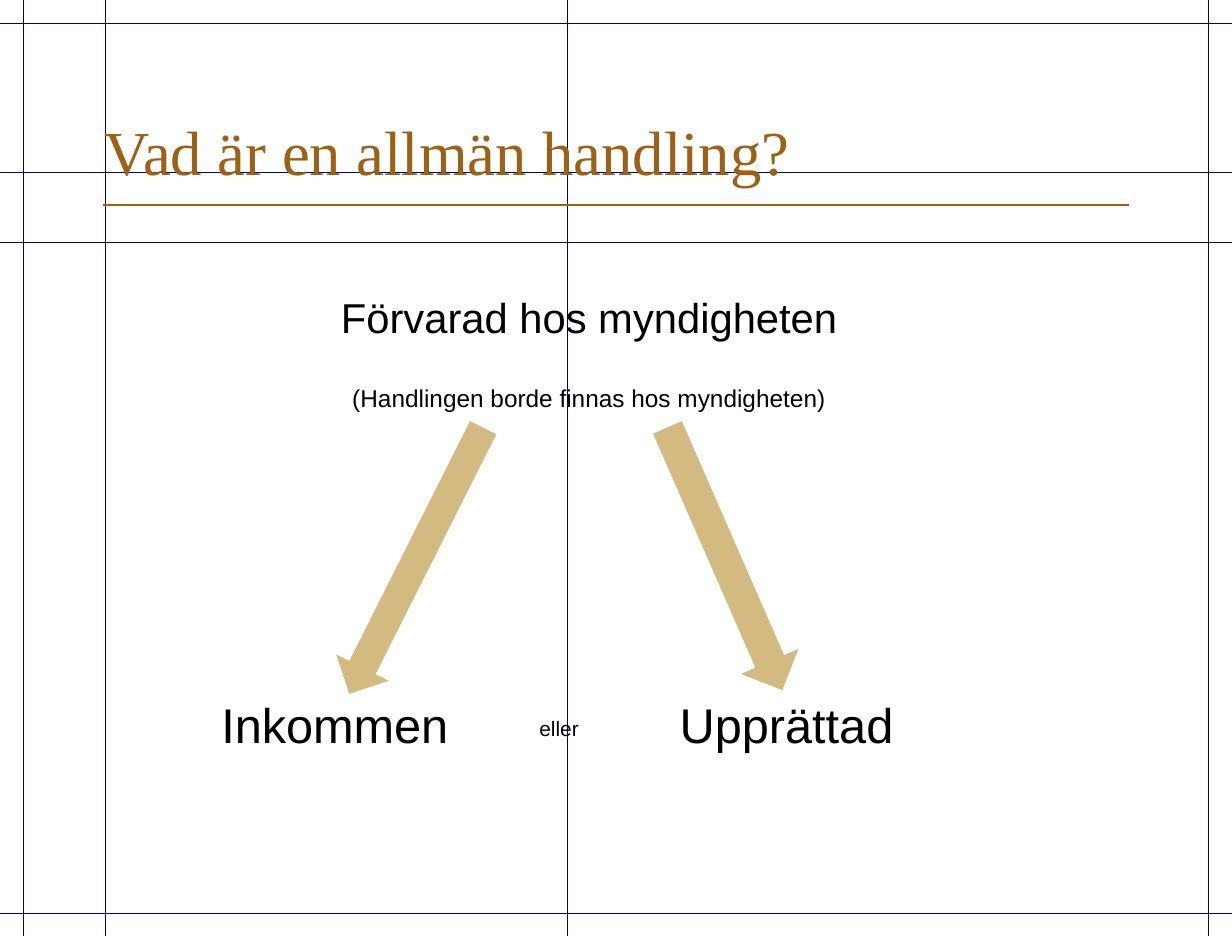
from dataclasses import dataclass

from lxml.etree import SubElement
from pptx import Presentation
from pptx.dml.color import RGBColor
from pptx.enum.shapes import MSO_CONNECTOR, MSO_SHAPE
from pptx.enum.text import MSO_ANCHOR, PP_ALIGN
from pptx.oxml.ns import qn
from pptx.util import Pt


@dataclass(frozen=True)
class Theme:
    guide: RGBColor = RGBColor(0x00, 0x00, 0x80)
    accent: RGBColor = RGBColor(0x9C, 0x61, 0x14)
    arrow: RGBColor = RGBColor(0xD2, 0xBA, 0x81)
    text: RGBColor = RGBColor(0x00, 0x00, 0x00)
    title_font: str = "Times New Roman"
    body_font: str = "Arial"
    title_size: int = 36
    outcome_size: int = 28
    heading_size: int = 24
    note_size: int = 14
    small_size: int = 12
    line_width: float = 0.75


THEME = Theme()
SLIDE_WIDTH, SLIDE_HEIGHT = 708.5, 538.5
HORIZONTAL_GUIDES = (13.7, 99.4, 139.7, 525.6)
VERTICAL_GUIDES = (13.7, 60.5, 326.2, 694.8)


def add_line(slide, start, end, color):
    line = slide.shapes.add_connector(
        MSO_CONNECTOR.STRAIGHT, *(Pt(value) for value in (*start, *end)))
    line.line.color.rgb = color
    line.line.width = Pt(THEME.line_width)
    SubElement(line._element.spPr, qn("a:effectLst"))


def add_guides(slide):
    for y in HORIZONTAL_GUIDES:
        add_line(slide, (0, y), (SLIDE_WIDTH, y), THEME.guide)
    for x in VERTICAL_GUIDES:
        add_line(slide, (x, 0), (x, SLIDE_HEIGHT), THEME.guide)


def add_text(slide, box, lines, font=THEME.body_font, color=THEME.text,
             align=PP_ALIGN.LEFT, anchor=MSO_ANCHOR.TOP, gap=0):
    """Add a text box; lines holds (text, size) pairs, gap points apart."""
    frame = slide.shapes.add_textbox(*(Pt(value) for value in box)).text_frame
    frame.word_wrap = True
    frame.vertical_anchor = anchor
    for index, (text, size) in enumerate(lines):
        paragraph = frame.add_paragraph() if index else frame.paragraphs[0]
        paragraph.text = text
        paragraph.alignment = align
        if index:
            paragraph.space_before = Pt(gap)
        paragraph.font.name = font
        paragraph.font.size = Pt(size)
        paragraph.font.color.rgb = color


def add_arrow(slide, box, rotation):
    arrow = slide.shapes.add_shape(
        MSO_SHAPE.DOWN_ARROW, *(Pt(value) for value in box))
    arrow.rotation = rotation
    arrow.shadow.inherit = False
    arrow.fill.solid()
    arrow.fill.fore_color.rgb = THEME.arrow
    arrow.line.fill.background()


def main():
    presentation = Presentation()
    presentation.slide_width = Pt(SLIDE_WIDTH)
    presentation.slide_height = Pt(SLIDE_HEIGHT)
    slide = presentation.slides.add_slide(presentation.slide_layouts[6])

    add_guides(slide)
    add_line(slide, (59, 118), (649.4, 118), THEME.accent)
    add_text(slide, (53.3, 47.5, 602.6, 64.1),
             [("Vad är en allmän handling?", THEME.title_size)],
             font=THEME.title_font, color=THEME.accent,
             anchor=MSO_ANCHOR.BOTTOM)
    add_text(slide, (151.2, 164.2, 375.1, 74.9),
             [("Förvarad hos myndigheten", THEME.heading_size),
              ("(Handlingen borde finnas hos myndigheten)", THEME.note_size)],
             align=PP_ALIGN.CENTER, gap=24)
    add_text(slide, (120.2, 396, 230.4, 41),
             [("Inkommen", THEME.outcome_size)])
    add_text(slide, (383.8, 396, 162, 41),
             [("Upprättad", THEME.outcome_size)])
    add_text(slide, (303.1, 408.2, 52.6, 21.6),
             [("eller", THEME.small_size)])
    add_arrow(slide, (222.5, 236.9, 33.8, 171.4), 26.7)
    add_arrow(slide, (398.9, 239, 36, 164.9), 336.4)

    presentation.save("out.pptx")


if __name__ == "__main__":
    main()
